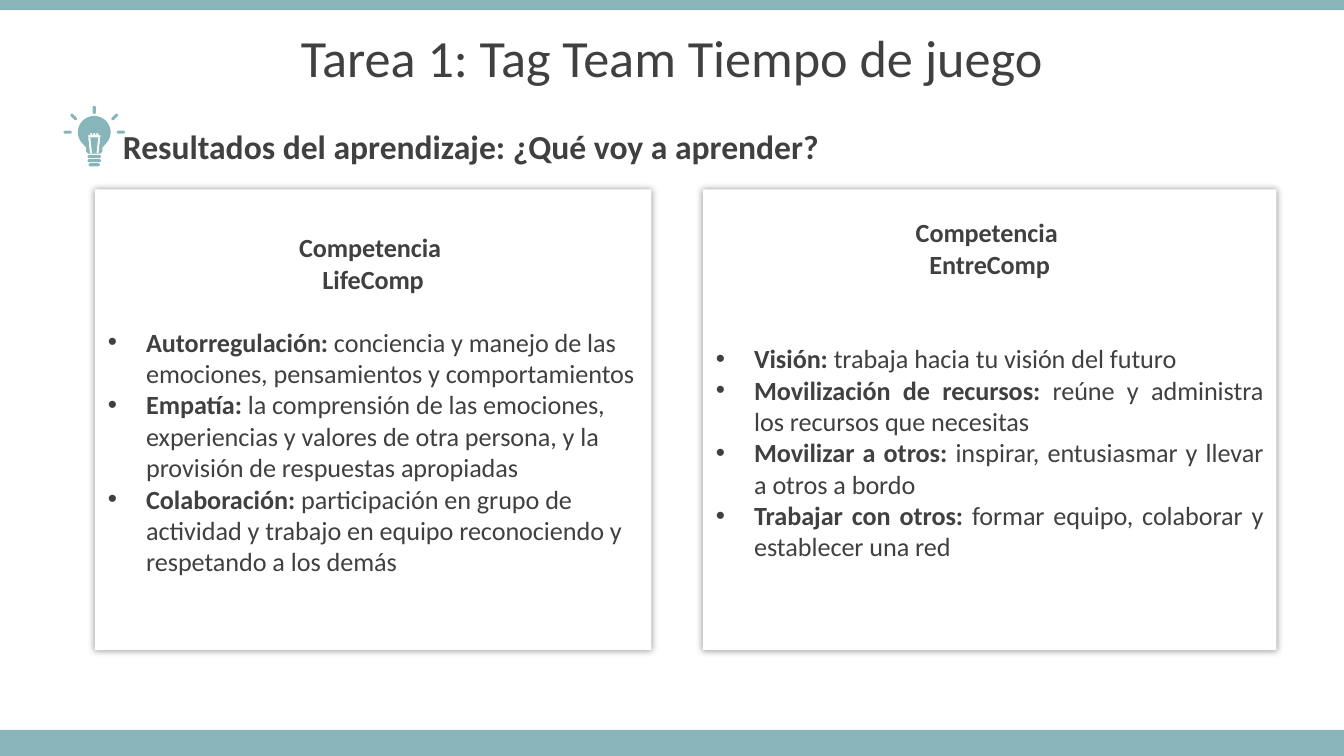
from dataclasses import dataclass
from math import cos, radians, sin

from lxml import etree
from pptx import Presentation
from pptx.dml.color import RGBColor
from pptx.enum.shapes import MSO_SHAPE
from pptx.enum.text import MSO_ANCHOR, MSO_AUTO_SIZE, PP_ALIGN
from pptx.oxml.ns import qn
from pptx.util import Inches, Pt

RECT = MSO_SHAPE.RECTANGLE
MIDDLE, TOP = MSO_ANCHOR.MIDDLE, MSO_ANCHOR.TOP
LEFT, CENTER, JUSTIFY = PP_ALIGN.LEFT, PP_ALIGN.CENTER, PP_ALIGN.JUSTIFY
FIXED = MSO_AUTO_SIZE.NONE


@dataclass(frozen=True)
class Theme:
    teal: RGBColor = RGBColor.from_string("87B5BA")
    ink: RGBColor = RGBColor.from_string("404040")
    white: RGBColor = RGBColor.from_string("FFFFFF")
    font: str = "Calibri"
    title: float = 37.3
    head: float = 24
    text: float = 18.67
    row: float = 22.6


THEME = Theme()

LIFE = [
    ("Autorregulación: ",
     "conciencia y manejo de las emociones, pensamientos y comportamientos"),
    ("Empatía: ",
     "la comprensión de las emociones, experiencias y valores de otra persona, "
     "y la provisión de respuestas apropiadas"),
    ("Colaboración: ",
     "participación en grupo de actividad y trabajo en equipo reconociendo y "
     "respetando a los demás"),
]
ENTRE = [
    ("Visión: ", "trabaja hacia tu visión del futuro"),
    ("Movilización de recursos: ", "reúne y administra los recursos que necesitas"),
    ("Movilizar a otros: ", "inspirar, entusiasmar y llevar a otros a bordo"),
    ("Trabajar con otros: ", "formar equipo, colaborar y establecer una red"),
]


def place(shape, box):
    shape.left, shape.top, shape.width, shape.height = map(Inches, box)


def style(run, size, bold=False):
    font = run.font
    font.name, font.size, font.bold = THEME.font, Pt(size), bold
    font.color.rgb = THEME.ink


def paint(shape, color):
    shape.shadow.inherit = False
    shape.fill.solid()
    shape.fill.fore_color.rgb = color
    shape.line.fill.background()


def bullet(para, mark, indent):
    props = para._p.get_or_add_pPr()
    props.set("marL", str(Inches(indent)))
    props.set("indent", str(Inches(-indent)))
    if mark:
        etree.SubElement(props, qn("a:buChar"), char=mark)
    else:
        etree.SubElement(props, qn("a:buNone"))


def glow(shape):
    effects = shape.element.spPr.find(qn("a:effectLst"))
    shade = etree.SubElement(effects, qn("a:outerShdw"), blurRad=str(Pt(5)),
                             algn="ctr", rotWithShape="0")
    color = etree.SubElement(shade, qn("a:srgbClr"), val="000000")
    etree.SubElement(color, qn("a:alpha"), val="40000")


def add_bands(slide, *boxes):
    for box in boxes:
        paint(slide.shapes.add_shape(RECT, *map(Inches, box)), THEME.teal)


def add_title(slide, box, text):
    title = slide.shapes.title
    place(title, box)
    frame = title.text_frame
    frame.text = text
    frame.auto_size, frame.vertical_anchor = FIXED, MIDDLE
    para = frame.paragraphs[0]
    para.alignment, para.line_spacing = CENTER, 0.9
    style(para.runs[0], THEME.title)


def add_head(slide, box, text):
    frame = slide.shapes.add_textbox(*map(Inches, box)).text_frame
    frame.word_wrap, frame.vertical_anchor = True, MIDDLE
    frame.text = text
    style(frame.paragraphs[0].runs[0], THEME.head, True)


def arc(x, y, radius, start, end, step):
    return [(x + radius * cos(radians(a)), y + radius * sin(radians(a)))
            for a in range(start, end + 1, step)]


def pill(x, y, size, thick, turn=0):
    """Outline of a round-ended bar centred on x, y."""
    half = (size - thick) / 2
    dx, dy = half * cos(radians(turn)), half * sin(radians(turn))
    return (arc(x + dx, y + dy, thick / 2, turn - 90, turn + 90, 30)
            + arc(x - dx, y - dy, thick / 2, turn + 90, turn + 270, 30))


def add_bulb(slide, box):
    left, top, wide, high = box
    mid, hub = left + wide / 2, top + 0.26

    # Glass and neck
    neck = [(0.08, 0.15), (0.08, 0.19), (0.06, 0.21),
            (-0.06, 0.21), (-0.08, 0.19), (-0.08, 0.15)]
    parts = [arc(mid, hub, 0.16, 135, 405, 10)
             + [(mid + x, hub + y) for x, y in neck]]

    # Screw base
    for i, size in enumerate((0.13, 0.13, 0.11)):
        parts.append(pill(mid, top + 0.5 + i * 0.04, size, 0.03))

    # Rays
    for turn, x, y in ((0, -0.26, 0), (45, -0.2, -0.15), (90, 0, -0.22),
                       (135, 0.2, -0.15), (0, 0.26, 0)):
        parts.append(pill(mid + x, hub + y, 0.08, 0.03, turn))

    # Filament cut out of the glass
    comb = [(-0.06, 0.05), (-0.06, 0.03)]
    for x in (-0.03, 0, 0.03):
        comb += [(x - 0.01, 0.03), (x - 0.01, 0.01), (x + 0.01, 0.01), (x + 0.01, 0.03)]
    comb += [(0.06, 0.03), (0.06, 0.05)]
    parts.append([(mid + x, hub + y) for x, y in comb])
    for side, turn in ((-1, 84), (1, 96)):
        parts.append(pill(mid + side * 0.04, hub + 0.13, 0.16, 0.02, turn))

    # One outline for all parts
    build = None
    for part in parts:
        points = [(Inches(x), Inches(y)) for x, y in part]
        if build:
            build.move_to(*points[0])
        else:
            build = slide.shapes.build_freeform(*points[0])
        build.add_line_segments(points[1:])
    bulb = build.convert_to_shape()
    place(bulb, box)
    paint(bulb, THEME.teal)


def add_card(slide, slot, box, name, items, inset, gap, align):
    card = slide.placeholders[slot]
    place(card, box)
    paint(card, THEME.white)
    glow(card)
    frame = card.text_frame
    frame.auto_size, frame.vertical_anchor = FIXED, TOP
    frame.margin_left = frame.margin_right = Inches(0.13)
    frame.margin_top = Inches(inset)
    frame.text = "\n".join(["Competencia ", name] + [term for term, _ in items])
    paras = frame.paragraphs
    for para in paras:
        para.space_before = para.space_after = Pt(0)
        style(para.runs[0], THEME.text, True)

    # Heading
    for para in paras[:2]:
        para.alignment = CENTER
        bullet(para, None, 0)

    # List
    paras[2].space_before = Pt(gap * THEME.row)
    for para, (_, note) in zip(paras[2:], items):
        para.alignment = align
        bullet(para, "•", 0.38)
        run = para.add_run()
        run.text = note
        style(run, THEME.text)


def main():
    deck = Presentation()
    deck.slide_width, deck.slide_height = Inches(13.33), Inches(7.5)
    slide = deck.slides.add_slide(deck.slide_layouts[3])

    # Bands
    add_bands(slide, (0, 7.24, 13.33, 0.26), (0, 0, 13.33, 0.1))

    # Title and heading
    add_title(slide, (0, 0.18, 13.33, 0.84), "Tarea 1: Tag Team Tiempo de juego")
    add_bulb(slide, (0.63, 1.05, 0.61, 0.6))
    add_head(slide, (1.12, 1.24, 7.48, 0.41),
             "Resultados del aprendizaje: ¿Qué voy a aprender?")

    # Cards
    add_card(slide, 1, (0.94, 1.88, 5.52, 4.57), "LifeComp", LIFE, 0.42, 1, LEFT)
    add_card(slide, 2, (6.97, 1.88, 5.69, 4.57), "EntreComp", ENTRE, 0.27, 2, JUSTIFY)

    deck.save("out.pptx")


if __name__ == "__main__":
    main()
